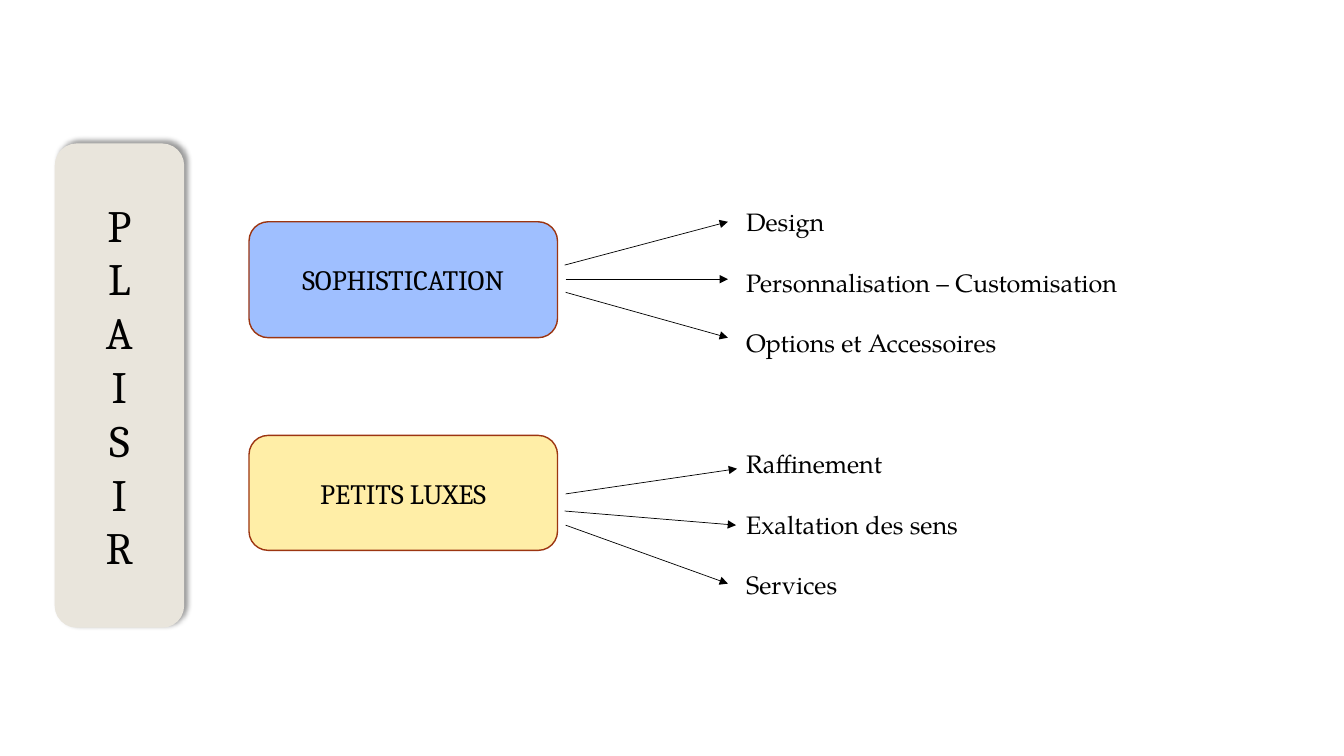
from dataclasses import dataclass

from lxml import etree
from pptx import Presentation
from pptx import util as u
from pptx.dml.color import RGBColor
from pptx.enum import shapes, text
from pptx.oxml import ns

BLACK = RGBColor(0x00, 0x00, 0x00)
BEIGE = RGBColor(0xE9, 0xE5, 0xDC)
BLUE = RGBColor(0x9F, 0xBF, 0xFF)
YELLOW = RGBColor(0xFF, 0xEE, 0xA7)
RUST = RGBColor(0x9C, 0x35, 0x11)
BOX_FONT = "Cambria"
LIST_FONT = "TeX Gyre Pagella"
LINE_PITCH = 21.6


@dataclass(frozen=True)
class Box:
    lines: tuple
    left: float
    top: float
    width: float
    height: float
    fill: RGBColor
    border: RGBColor
    size: int


@dataclass(frozen=True)
class Arrow:
    start_x: float
    start_y: float
    end_x: float
    end_y: float


@dataclass(frozen=True)
class Item:
    label: str
    blank_lines: int


PLEASURE = Box(tuple("PLAISIR"), 0.55, 1.43, 1.27, 4.79, BEIGE, BEIGE, 32)
THEMES = (
    Box(("SOPHISTICATION",), 2.47, 2.2, 3.06, 1.15, BLUE, RUST, 20),
    Box(("PETITS LUXES",), 2.47, 4.32, 3.06, 1.14, YELLOW, RUST, 20),
)
ITEMS = (
    Item("Design", 0),
    Item("Personnalisation – Customisation", 1),
    Item("Options et Accessoires", 1),
    Item("Raffinement", 3),
    Item("Exaltation des sens", 1),
    Item("Services", 1),
)
ARROWS = (
    Arrow(5.6, 2.63, 7.22, 2.2),
    Arrow(5.61, 2.77, 7.22, 2.77),
    Arrow(5.61, 2.9, 7.22, 3.35),
    Arrow(5.61, 4.9, 7.31, 4.65),
    Arrow(5.6, 5.07, 7.3, 5.21),
    Arrow(5.61, 5.21, 7.22, 5.79),
)


def add_run(paragraph, content: str, font_name: str, size: int) -> None:
    run = paragraph.add_run()
    run.text = content
    run.font.name = font_name
    run.font.size = u.Pt(size)
    run.font.color.rgb = BLACK


def add_box(slide, box: Box):
    shape = slide.shapes.add_shape(
        shapes.MSO_SHAPE.ROUNDED_RECTANGLE,
        u.Inches(box.left), u.Inches(box.top), u.Inches(box.width), u.Inches(box.height),
    )
    shape.shadow.inherit = False
    shape.fill.solid()
    shape.fill.fore_color.rgb = box.fill
    shape.line.color.rgb = box.border
    shape.line.width = u.Pt(1)
    shape.text_frame.vertical_anchor = text.MSO_ANCHOR.MIDDLE
    paragraph = shape.text_frame.paragraphs[0]
    paragraph.alignment = text.PP_ALIGN.CENTER
    paragraph.font.size = u.Pt(box.size)
    for index, line in enumerate(box.lines):
        if index:
            paragraph.add_line_break()
        add_run(paragraph, line, BOX_FONT, box.size)
    return shape


def add_shadow(shape) -> None:
    effects = shape._element.spPr.find(ns.qn("a:effectLst"))
    shadow = etree.SubElement(
        effects, ns.qn("a:outerShdw"),
        blurRad=str(u.Pt(4)), dist=str(u.Pt(3)), dir=str(315 * 60000),
        algn="bl", rotWithShape="0",
    )
    color = etree.SubElement(shadow, ns.qn("a:srgbClr"), val=str(BLACK))
    etree.SubElement(color, ns.qn("a:alpha"), val="40000")


def fill_list(placeholder, items: tuple) -> None:
    placeholder.left, placeholder.top = u.Inches(7.3), u.Inches(2)
    placeholder.width, placeholder.height = u.Inches(4.76), u.Inches(4.2)
    frame = placeholder.text_frame
    frame.word_wrap = True
    frame.auto_size = text.MSO_AUTO_SIZE.NONE
    frame.vertical_anchor = text.MSO_ANCHOR.TOP
    for index, item in enumerate(items):
        paragraph = frame.add_paragraph() if index else frame.paragraphs[0]
        properties = paragraph._p.get_or_add_pPr()
        properties.set("marL", "0")
        properties.set("indent", "0")
        etree.SubElement(properties, ns.qn("a:buNone"))
        paragraph.alignment = text.PP_ALIGN.LEFT
        paragraph.space_before = u.Pt(item.blank_lines * LINE_PITCH)
        add_run(paragraph, item.label, LIST_FONT, 18)


def add_arrow(slide, arrow: Arrow) -> None:
    connector = slide.shapes.add_connector(
        shapes.MSO_CONNECTOR.STRAIGHT,
        u.Inches(arrow.start_x), u.Inches(arrow.start_y),
        u.Inches(arrow.end_x), u.Inches(arrow.end_y),
    )
    connector.line.color.rgb = BLACK
    connector.line.width = u.Pt(0.5)
    etree.SubElement(connector.line._get_or_add_ln(), ns.qn("a:tailEnd"), type="triangle")
    etree.SubElement(connector._element.spPr, ns.qn("a:effectLst"))


def main() -> None:
    presentation = Presentation()
    presentation.slide_width = u.Inches(13.33)
    presentation.slide_height = u.Inches(7.5)
    slide = presentation.slides.add_slide(presentation.slide_layouts[1])
    title = slide.shapes.title._element
    title.getparent().remove(title)
    add_shadow(add_box(slide, PLEASURE))
    for theme in THEMES:
        add_box(slide, theme)
    fill_list(slide.placeholders[1], ITEMS)
    for arrow in ARROWS:
        add_arrow(slide, arrow)
    presentation.save("out.pptx")


if __name__ == "__main__":
    main()
